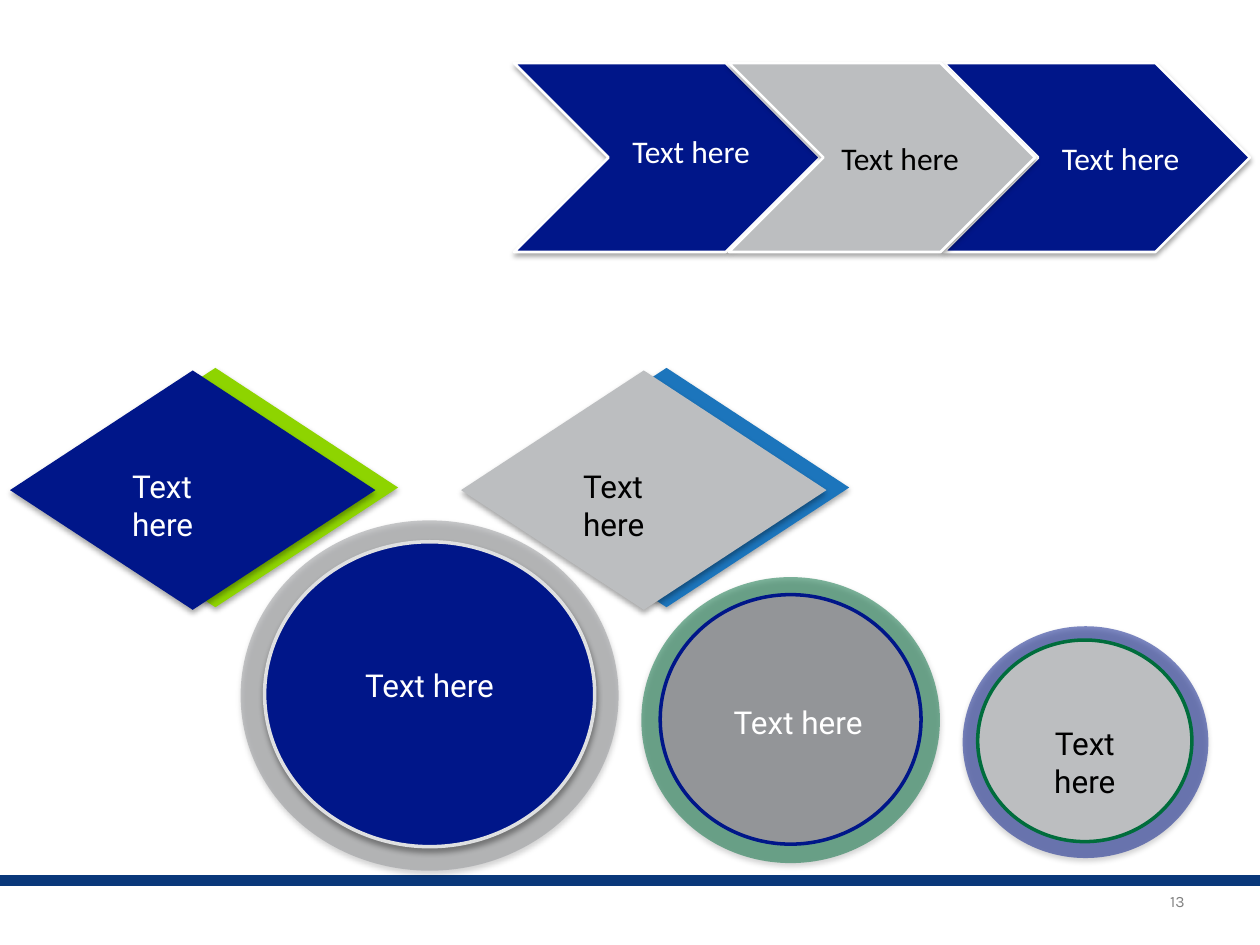
from lxml import etree
from pptx import Presentation
from pptx import util as u
from pptx.dml.color import RGBColor
from pptx.enum import shapes, text
from pptx.oxml.ns import qn

WIDTH, HEIGHT = u.Inches(10), u.Inches(7.5)
NAVY, SILVER, GREY, GREEN = "001689", "BCBEC0", "939598", "006D3C"
WHITE, BLACK = "FFFFFF", "000000"
LABEL = "Text here"
LABEL_HEIGHT = 5.33


def colour(hex_code):
    return RGBColor.from_string(hex_code)


def place(x, y, w, h):
    """Turn percentages of the slide's width and height into lengths."""
    return [int(share * side / 100)
            for share, side in zip((x, y, w, h), (WIDTH, HEIGHT) * 2)]


def add_shadow(figure):
    effects = figure._element.spPr.find(qn("a:effectLst"))
    shadow = etree.SubElement(effects, qn("a:outerShdw"), blurRad="40000",
                              dist="23000", dir="5400000", rotWithShape="0")
    tint = etree.SubElement(shadow, qn("a:srgbClr"), val=BLACK)
    etree.SubElement(tint, qn("a:alpha"), val="35000")


def add_figure(group, preset, box, fill, line=None, line_width=2,
               opacity=100, shadow=True):
    figure = group.shapes.add_shape(preset, *place(*box))
    figure.fill.solid()
    figure.fill.fore_color.rgb = colour(fill)
    if opacity < 100:
        tint = figure._element.spPr.find(qn("a:solidFill"))[0]
        etree.SubElement(tint, qn("a:alpha"), val=str(opacity * 1000))
    if line:
        figure.line.color.rgb = colour(line)
        figure.line.width = u.Pt(line_width)
    else:
        figure.line.fill.background()
    figure.shadow.inherit = False
    if shadow:
        add_shadow(figure)


def add_label(parent, box, words, ink, font="Roboto", size=18,
              align=text.PP_ALIGN.LEFT, anchor=text.MSO_ANCHOR.TOP, grow=True):
    frame = parent.shapes.add_textbox(*place(*box)).text_frame
    frame.word_wrap = True
    frame.vertical_anchor = anchor
    if grow:
        frame.auto_size = text.MSO_AUTO_SIZE.SHAPE_TO_FIT_TEXT
    paragraph = frame.paragraphs[0]
    paragraph.alignment = align
    run = paragraph.add_run()
    run.text = words
    run.font.name = font
    run.font.size = u.Pt(size)
    run.font.color.rgb = colour(ink)


def add_footer(slide):
    x, y, w, _ = place(0, 93.2, 100, 0)
    rule = slide.shapes.add_connector(shapes.MSO_CONNECTOR.STRAIGHT, x, y, x + w, y)
    rule.line.color.rgb = colour("0A387A")
    rule.line.width = u.Pt(6)
    etree.SubElement(rule._element.spPr, qn("a:effectLst"))
    add_label(slide, (71.7, 93.33, 23.3, 4.13), "13", "7F7F7F", "Karla", 9,
              text.PP_ALIGN.RIGHT, text.MSO_ANCHOR.MIDDLE, grow=False)


def add_diamond(slide, left, back, front, ink):
    group = slide.shapes.add_group_shape()
    for x, y, fill in ((1.8, 38.93, back), (0, 39.2, front)):
        add_figure(group, shapes.MSO_SHAPE.DIAMOND,
                   (left + x, y, 29, 25.33), fill)
    add_label(group, (left + 8.7, 48.8, 11.7, LABEL_HEIGHT), LABEL, ink)


def add_chevrons(slide):
    group = slide.shapes.add_group_shape()
    for column, fill in ((0, NAVY), (2, NAVY), (1, SILVER)):
        add_figure(group, shapes.MSO_SHAPE.CHEVRON,
                   (40.8 + 17.05 * column, 6.67, 24.3, 20), fill, WHITE, 1.5)
    for x, y, ink in ((49.2, 13.33, WHITE), (83.3, 14, WHITE), (65.8, 14, BLACK)):
        add_label(group, (x, y, 11.7, LABEL_HEIGHT), LABEL, ink, "Calibri")


def add_disc(slide, ring_box, ring, core_box, core, rim, label_spot, ink,
             core_shadow=False):
    group = slide.shapes.add_group_shape()
    oval = shapes.MSO_SHAPE.OVAL
    add_figure(group, oval, ring_box, ring, opacity=50)
    add_figure(group, oval, core_box, core, rim, shadow=core_shadow)
    add_label(group, (*label_spot, LABEL_HEIGHT), LABEL, ink,
              align=text.PP_ALIGN.CENTER)


def main():
    deck = Presentation()
    deck.slide_width, deck.slide_height = WIDTH, HEIGHT
    slide = deck.slides.add_slide(deck.slide_layouts[6])

    add_footer(slide)
    add_diamond(slide, 0.8, "8ED400", NAVY, WHITE)
    add_chevrons(slide)
    add_diamond(slide, 36.6, "1C75BC", SILVER, BLACK)
    add_disc(slide, (50.9, 61.07, 23.7, 30.27), GREEN,
             (52.4, 62.93, 20.7, 26.4), GREY, NAVY, (56.7, 73.73, 13.3), WHITE)
    add_disc(slide, (76.4, 66.27, 19.5, 24.53), NAVY,
             (77.6, 67.73, 17, 21.33), SILVER, GREEN, (80.1, 76, 12), BLACK)
    add_disc(slide, (19.1, 55.07, 30, 37.07), GREY,
             (21, 57.33, 26.2, 32.27), NAVY, "DFE0E1", (27.1, 69.87, 14), WHITE,
             core_shadow=True)
    deck.save("out.pptx")


if __name__ == "__main__":
    main()
